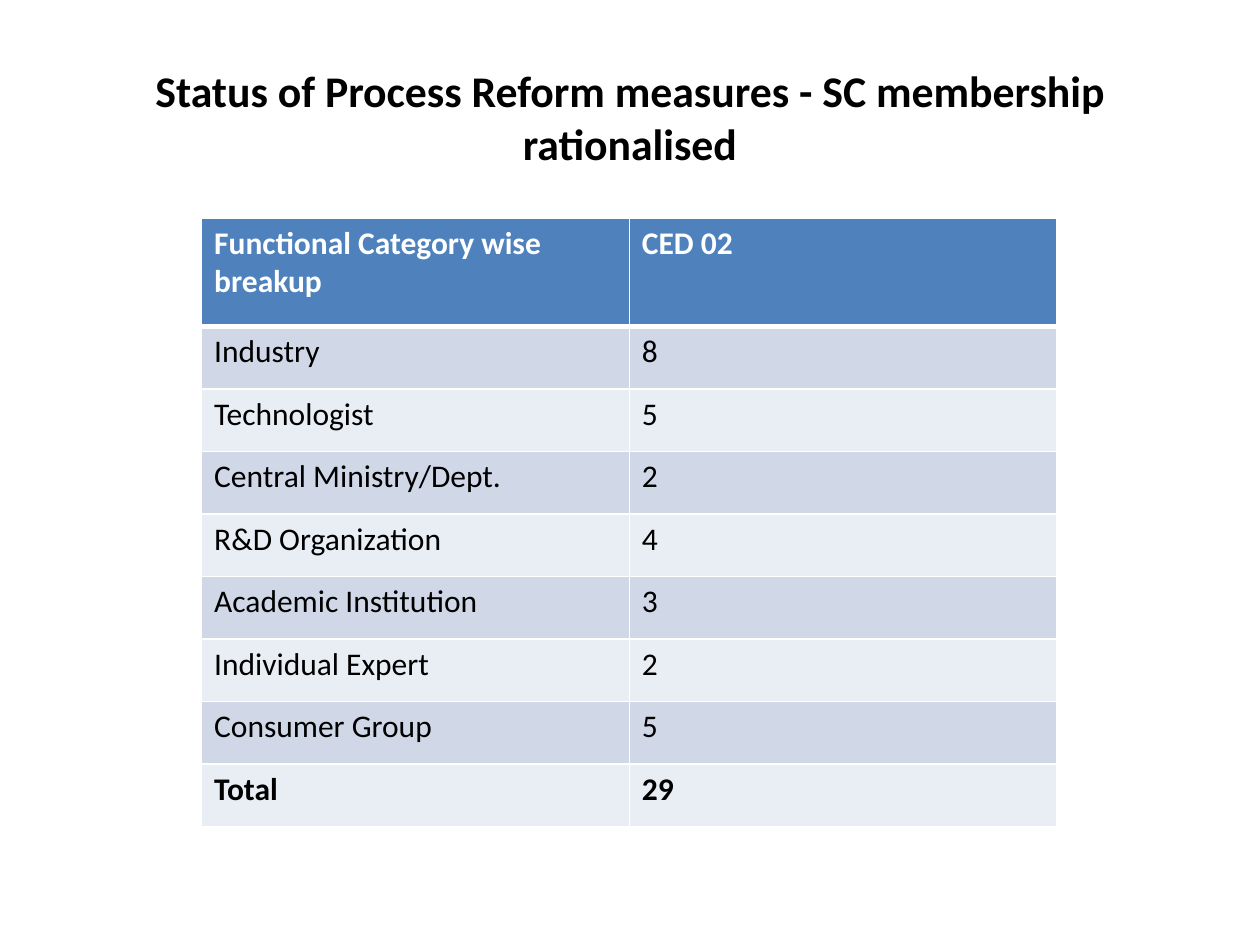
from lxml import etree
from pptx import Presentation
from pptx import util as u
from pptx.dml.color import RGBColor
from pptx.enum import text
from pptx.oxml import ns

TITLE = "Status of Process Reform measures - SC membership rationalised"
ROWS = [
    ("Functional Category wise breakup", "CED 02"),
    ("Industry", "8"),
    ("Technologist", "5"),
    ("Central Ministry/Dept.", "2"),
    ("R&D Organization", "4"),
    ("Academic Institution", "3"),
    ("Individual Expert", "2"),
    ("Consumer Group", "5"),
    ("Total", "29"),
]
HEADER_FILL = "4F81BD"
BAND_FILLS = ("E9EDF4", "D0D8E8")
HEADER_HEIGHT = 0.86


def color(value):
    """Return the colour for a hex string."""
    return RGBColor.from_string(value)


def write_text(frame, content, ink, **formats):
    """Write one paragraph with the given font values."""
    paragraph = frame.paragraphs[0]
    run = paragraph.add_run()
    run.text = content
    run.font.color.rgb = color(ink)
    for name, value in {"name": "Calibri", **formats}.items():
        setattr(run.font, name, value)
    return paragraph


def set_borders(cell, widths, ink="FFFFFF"):
    """Draw solid cell borders from a dict of side to width in points."""
    properties = cell._tc.get_or_add_tcPr()
    for side, width in widths.items():
        line = etree.SubElement(properties, ns.qn(f"a:ln{side}"), w=str(u.Pt(width)))
        fill = etree.SubElement(line, ns.qn("a:solidFill"))
        etree.SubElement(fill, ns.qn("a:srgbClr"), val=ink)


def add_title(slide, left, top, width, height):
    """Place the centred slide title."""
    frame = slide.shapes.add_textbox(*map(u.Inches, (left, top, width, height))).text_frame
    frame.word_wrap = True
    frame.vertical_anchor = text.MSO_ANCHOR.MIDDLE
    paragraph = write_text(frame, TITLE, "000000", size=u.Pt(25), bold=True)
    paragraph.alignment = text.PP_ALIGN.CENTER


def add_membership_table(slide, left, top, width, height):
    """Place the banded table of members by category."""
    box = map(u.Inches, (left, top, width, height))
    table = slide.shapes.add_table(len(ROWS), len(ROWS[0]), *box).table
    body_height = (height - HEADER_HEIGHT) / (len(ROWS) - 1)
    for index, values in enumerate(ROWS):
        is_header = index == 0
        table.rows[index].height = u.Inches(HEADER_HEIGHT if is_header else body_height)
        for column, value in enumerate(values):
            cell = table.cell(index, column)
            set_borders(cell, {"L": 1, "R": 1, "T": 3 if index == 1 else 1, "B": 3 if is_header else 1})
            cell.fill.solid()
            cell.fill.fore_color.rgb = color(HEADER_FILL if is_header else BAND_FILLS[index % 2])
            write_text(
                cell.text_frame,
                value,
                "FFFFFF" if is_header else "000000",
                size=u.Pt(18),
                bold=index in (0, len(ROWS) - 1),
            )


def main():
    """Build and save the presentation."""
    presentation = Presentation()
    presentation.slide_width = u.Inches(10)
    presentation.slide_height = u.Inches(7.5)
    slide = presentation.slides.add_slide(presentation.slide_layouts[6])
    add_membership_table(slide, 1.6, 1.73, 6.79, 4.83)
    add_title(slide, 0.5, 0.3, 9, 1.25)
    presentation.save("out.pptx")


if __name__ == "__main__":
    main()
